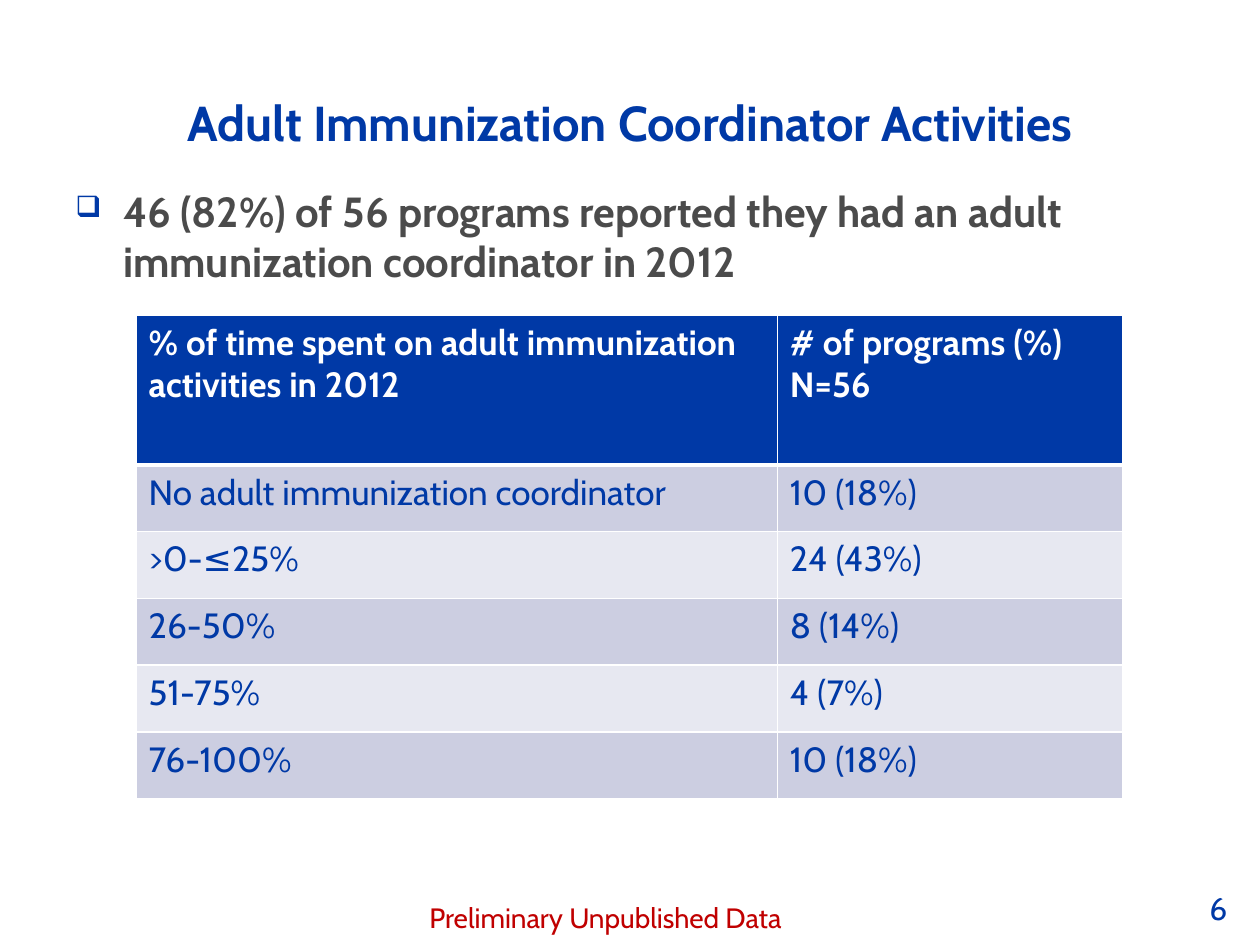
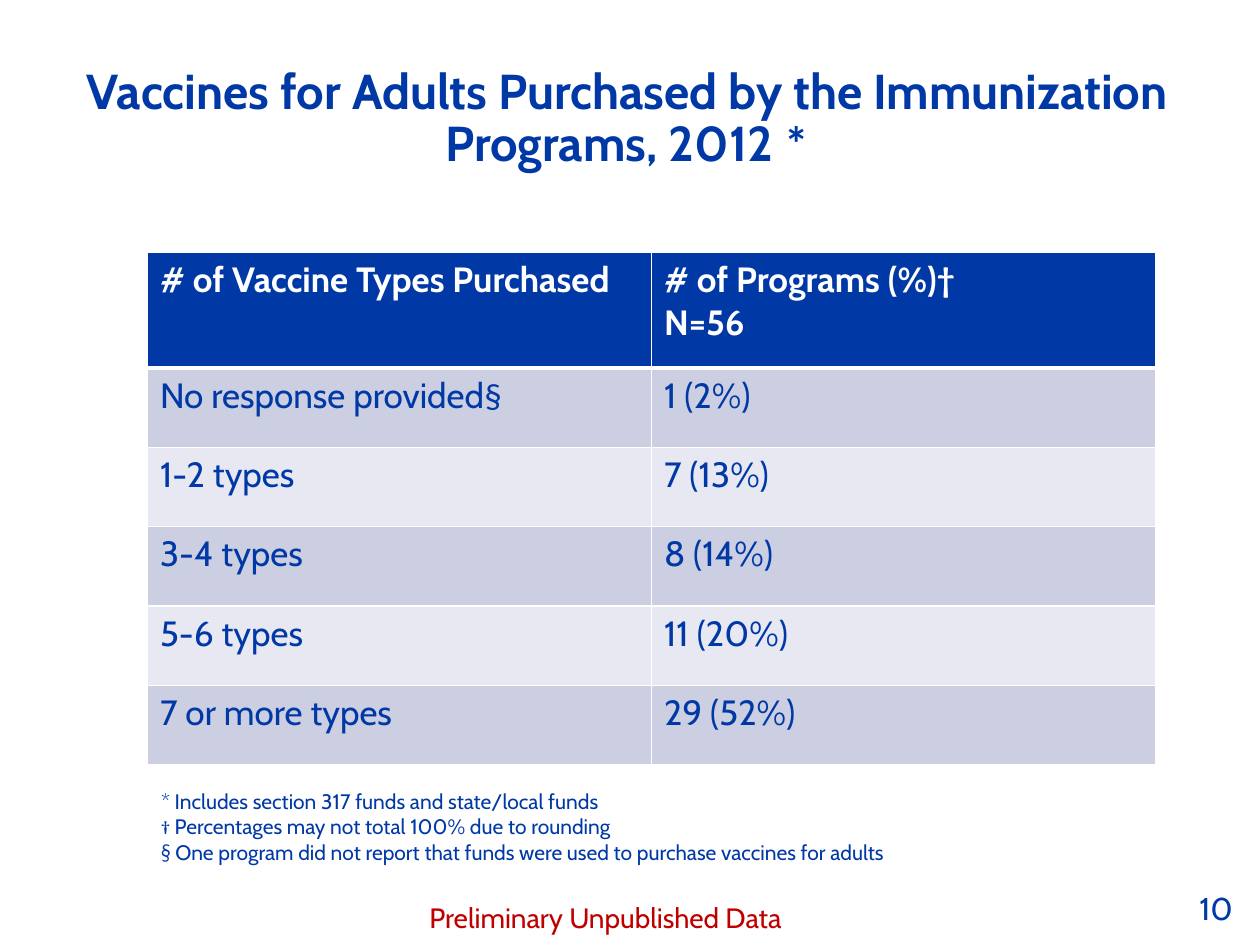
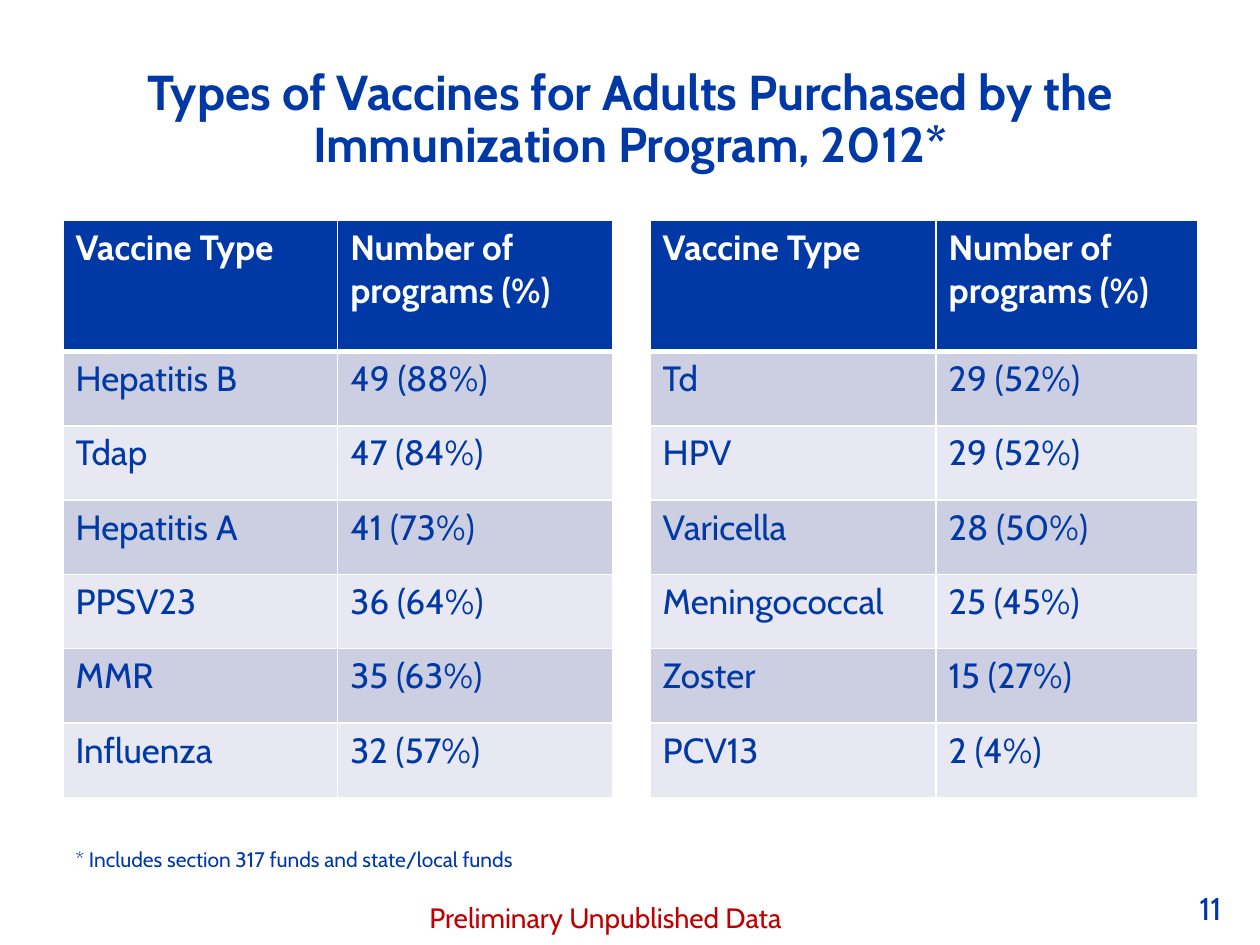
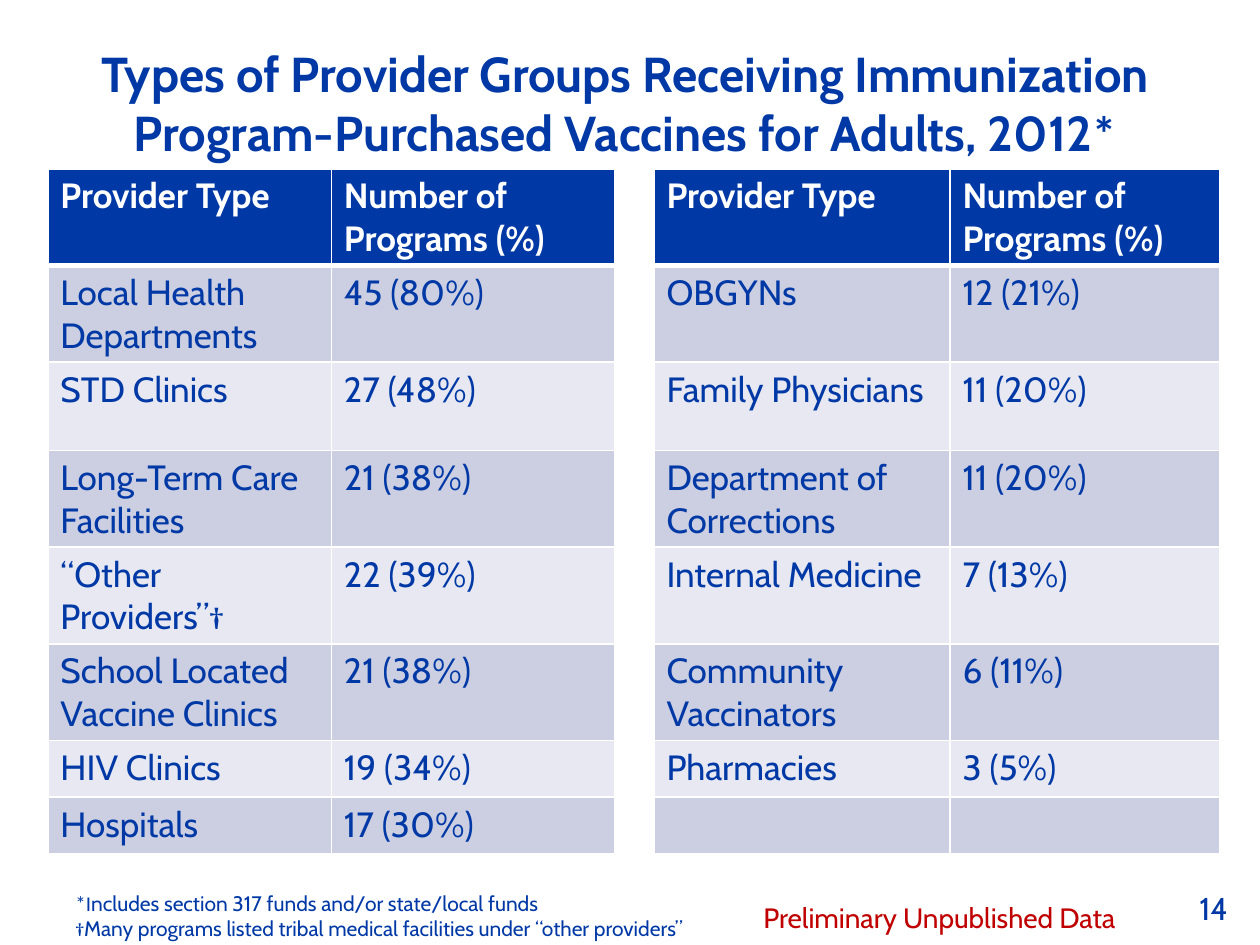
from lxml import etree
from pptx import Presentation
from pptx.dml.color import RGBColor
from pptx.enum import text
from pptx.oxml import ns
from pptx.util import Inches, Pt

BLUE, GREY, RED, WHITE = "0039A6", "4B4B4B", "C00000", "FFFFFF"
BANDS = ("CCCEE1", "E7E8F1")
FONT, ALT = "Cabin", "Calibri"
DRAFT = "Preliminary Unpublished Data"

# A paragraph is a string, or a tuple whose every second part is in ALT.
# A cell is a list of paragraphs; None marks the gap between two tables.
FUNDS = "* Includes section 317 funds and state/local funds"
VACCINE = ["Vaccine Type"], ["Number of programs (%)"]
GROUP = ["Provider Type"], ["Number of Programs (%)"]


def rows(*lines):
    return [[[part] for part in line] for line in lines]


def pairs(head, left, right):
    """Two tables side by side, with a gap column between them."""
    return [[*head, None, *head]] + [
        [*a, None, *b] for a, b in zip(rows(*left), rows(*right))]


SLIDES = [
    dict(
        page="6", page_x=9.5,
        title="Adult Immunization Coordinator Activities",
        title_at=(0, 0.3, 10, 0.95),
        point="46 (82%) of 56 programs reported they had an adult "
              "immunization coordinator in 2012",
        at=(1.08, 2.5), cols=(5.09, 2.74), high=[1.19] + [0.53] * 5,
        cells=[[["% of time spent on adult immunization activities in 2012"],
                ["# of programs (%)", "N=56"]]] + rows(
            ("No adult immunization coordinator", "10 (18%)"),
            (">0-≤25%", "24 (43%)"),
            ("26-50%", "8 (14%)"),
            ("51-75%", "4 (7%)"),
            ("76-100%", "10 (18%)")),
    ),
    dict(
        page="10",
        title=("Vaccines for Adults Purchased by the Immunization "
               "Programs, 2012 ", "*"),
        title_at=(0.35, 0.33, 9.25, 1.08),
        at=(1.17, 2), cols=(4, 4), high=[0.92] + [0.63] * 5,
        cells=[[["# of Vaccine Types Purchased"],
                [("# of Programs (%)", "†"), "N=56"]]] + rows(
            (("No response provided", "§"), "1 (2%)"),
            ("1-2 types", "7 (13%)"),
            ("3-4 types", "8 (14%)"),
            ("5-6 types", "11 (20%)"),
            ("7 or more types", "29 (52%)")),
        notes=[FUNDS,
               "† Percentages may not total 100% due to rounding",
               "§ One program did not report that funds were used to "
               "purchase vaccines for adults"],
        notes_at=(1.18, 6.21, 7.67, 0.71),
    ),
    dict(
        page="11",
        title="Types of Vaccines for Adults Purchased by the Immunization "
              "Program, 2012*",
        title_at=(0.5, 0.3, 9, 1.12),
        at=(0.5, 1.75), cols=(2.18, 2.18, 0.3, 2.27, 2.08),
        high=[1.04] + [0.59] * 6,
        cells=pairs(
            VACCINE,
            [("Hepatitis B", "49 (88%)"), ("Tdap", "47 (84%)"),
             ("Hepatitis A", "41 (73%)"), ("PPSV23", "36 (64%)"),
             ("MMR", "35 (63%)"), ("Influenza", "32 (57%)")],
            [("Td", "29 (52%)"), ("HPV", "29 (52%)"),
             ("Varicella", "28 (50%)"), ("Meningococcal", "25 (45%)"),
             ("Zoster", "15 (27%)"), ("PCV13", "2 (4%)")]),
        notes=[FUNDS], notes_at=(0.5, 6.67, 9, 0.33),
    ),
    dict(
        page="14", draft_x=5.96,
        title=("Types of Provider Groups Receiving Immunization "
               "Program-Purchased Vaccines for Adults, 2012", "*"),
        title_at=(0, 0.3, 9.92, 1.04), loose=True,
        at=(0.38, 1.34), cols=(2.25, 2.25, 0.31, 2.35, 2.14),
        high=[0.7] * 6 + [0.45] * 2,
        cells=pairs(
            GROUP,
            [("Local Health Departments", "45 (80%)"),
             ("STD Clinics", "27 (48%)"),
             ("Long-Term Care Facilities", "21 (38%)"),
             ("“Other Providers”†", "22 (39%)"),
             ("School Located Vaccine Clinics", "21 (38%)"),
             ("HIV Clinics", "19 (34%)"), ("Hospitals", "17 (30%)")],
            [("OBGYNs", "12 (21%)"), ("Family Physicians", "11 (20%)"),
             ("Department of Corrections", "11 (20%)"),
             ("Internal Medicine", "7 (13%)"),
             ("Community Vaccinators", "6 (11%)"),
             ("Pharmacies", "3 (5%)"), ("", "")]),
        notes=[("", "*I", "ncludes section 317 funds and/or state/local funds"),
               "†Many programs listed tribal medical facilities under "
               "“other providers”"],
        notes_at=(0.5, 7.02, 5.5, 0.5),
    ),
]


def rgb(code):
    return RGBColor.from_string(code)


def node(parent, tag, **attrs):
    item = etree.SubElement(parent, ns.qn("a:" + tag))
    for key, val in attrs.items():
        item.set(key, str(val))
    return item


# Text
def write(frame, paras, size, color, bold=False):
    frame.word_wrap = True
    for i, para in enumerate(paras):
        p = frame.add_paragraph() if i else frame.paragraphs[0]
        parts = (para,) if isinstance(para, str) else para
        for j, part in enumerate(parts):
            if part:
                run = p.add_run()
                run.text = part
                if len(parts) > 1:
                    run.font.name = ALT if j % 2 else FONT
        font = p.font
        font.size, font.bold, font.name = Pt(size), bold, FONT
        font.color.rgb = rgb(color)


def box(slide, at, paras, size, color, bold=False):
    frame = slide.shapes.add_textbox(*map(Inches, at)).text_frame
    write(frame, paras, size, color, bold)
    return frame


def head(slide, data):
    frame = box(slide, data["title_at"], [data["title"]], 28, BLUE, True)
    p = frame.paragraphs[0]
    p.alignment = text.PP_ALIGN.CENTER
    if not data.get("loose"):
        frame.vertical_anchor = text.MSO_ANCHOR.BOTTOM
        p.line_spacing = Pt(30)


def bullet(slide, line):
    frame = slide.shapes.add_textbox(
        *map(Inches, (0.5, 1.42, 9, 1.08))).text_frame
    props = frame.paragraphs[0]._p.get_or_add_pPr()
    props.set("marL", str(Inches(0.38)))
    props.set("indent", str(-Inches(0.38)))
    node(node(props, "buClr"), "srgbClr", val=BLUE)
    node(props, "buSzPct", val=70000)
    node(props, "buChar", char="❑")
    write(frame, [line], 24, GREY, True)


# Table
def edges(cell, row):
    props = cell._tc.get_or_add_tcPr()
    wide = {"lnT": 3 if row == 1 else 1, "lnB": 3 if row == 0 else 1}
    for side in ("lnL", "lnR", "lnT", "lnB"):
        line = node(props, side, w=Pt(wide.get(side, 1)))
        node(node(line, "solidFill"), "srgbClr", val=WHITE)


def grid(slide, data):
    cols, high, cells = data["cols"], data["high"], data["cells"]
    spot = (*data["at"], sum(cols), sum(high))
    table = slide.shapes.add_table(
        len(high), len(cols), *map(Inches, spot)).table
    for col, width in zip(table.columns, cols):
        col.width = Inches(width)
    for r, line in enumerate(cells):
        table.rows[r].height = Inches(high[r])
        for c, paras in enumerate(line):
            cell = table.cell(r, c)
            edges(cell, r)
            cell.fill.solid()
            band = BANDS[(r - 1) % 2] if r else BLUE
            cell.fill.fore_color.rgb = rgb(WHITE if paras is None else band)
            if paras:
                write(cell.text_frame, paras, 20, BLUE if r else WHITE, r == 0)


def main():
    deck = Presentation()
    deck.slide_width, deck.slide_height = Inches(10), Inches(7.5)
    for data in SLIDES:
        slide = deck.slides.add_slide(deck.slide_layouts[6])
        head(slide, data)
        if "point" in data:
            bullet(slide, data["point"])
        grid(slide, data)
        if "notes" in data:
            box(slide, data["notes_at"], data["notes"], 12, BLUE)
        # Footer
        left = data.get("page_x", 9.42)
        box(slide, (left, 7.01, 9.92 - left, 0.4), [data["page"]], 18, BLUE)
        box(slide, (data.get("draft_x", 3.31), 7.1, 3.38, 0.37),
            [DRAFT], 16, RED)
    deck.save("out.pptx")


if __name__ == "__main__":
    main()
